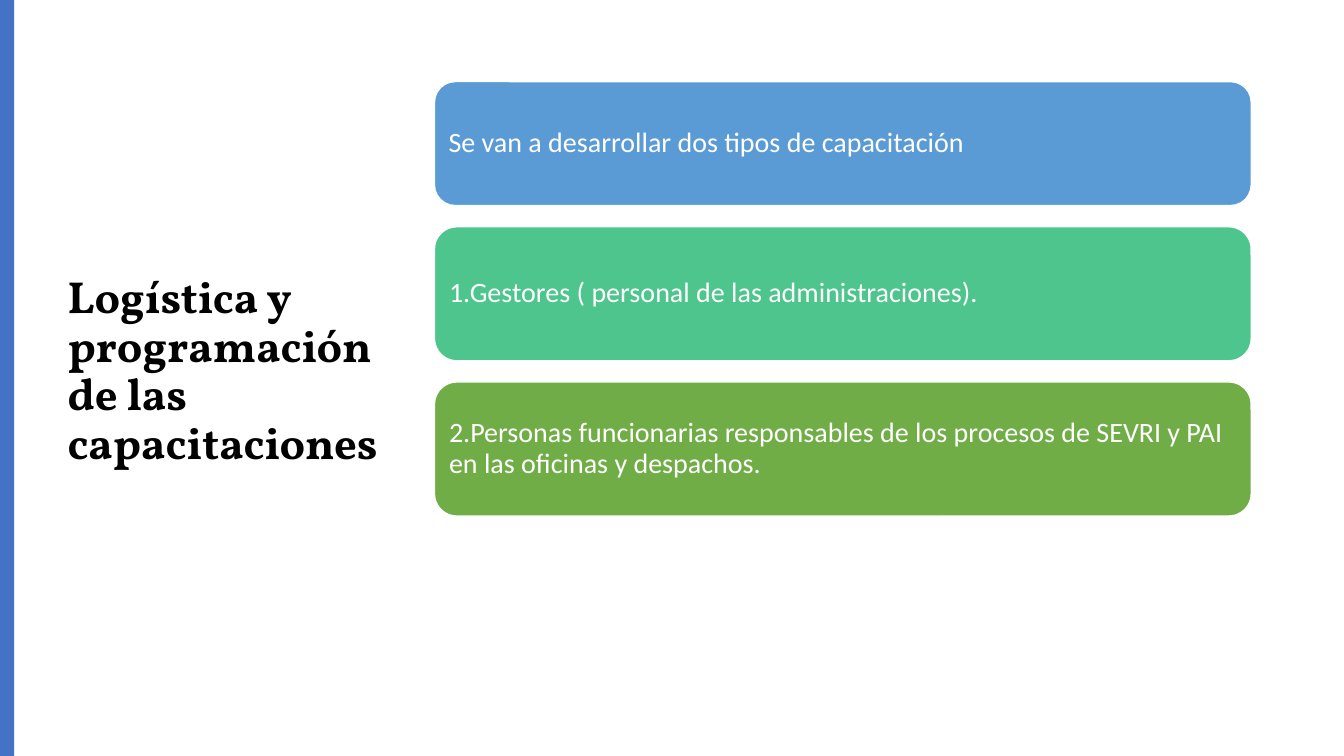
from dataclasses import dataclass

from pptx import Presentation
from pptx import util as u
from pptx.dml.color import RGBColor
from pptx.enum import shapes, text

SLIDE_WIDTH = u.Inches(13.33)
SLIDE_HEIGHT = u.Inches(7.5)
CARD_LEFT, CARD_WIDTH = 32.33, 60.77
FIRST_CARD_TOP, CARD_GAP = 10.8, 2.8


@dataclass
class Box:
    left: float
    top: float
    width: float
    height: float


@dataclass
class Card:
    wording: str
    fill: str
    height: float


CARDS = [
    Card("Se van a desarrollar dos tipos de capacitación", "5B9BD5", 16.4),
    Card("1.Gestores ( personal de las administraciones).", "4DC58D", 17.73),
    Card(
        "2.Personas funcionarias responsables de los procesos de SEVRI y PAI "
        "en las oficinas y despachos.",
        "70AD47",
        17.73,
    ),
]

TITLE_FONT = {"name": "Vollkorn", "size": u.Pt(32), "bold": True}
CARD_FONT = {"name": "Calibri", "size": u.Pt(20), "bold": False}
TITLE_FRAME = {
    "word_wrap": True,
    "auto_size": text.MSO_AUTO_SIZE.NONE,
    "vertical_anchor": text.MSO_ANCHOR.MIDDLE,
}
CARD_FRAME = TITLE_FRAME | {
    f"margin_{side}": u.Inches(0.08) for side in ("left", "top", "right", "bottom")
}
PARAGRAPH = {"alignment": text.PP_ALIGN.LEFT, "line_spacing": 0.9}


def color(value: str) -> RGBColor:
    return RGBColor.from_string(value)


def apply(target: object, values: dict) -> None:
    for name, value in values.items():
        setattr(target, name, value)


def place(box: Box) -> dict:
    return {
        "left": round(SLIDE_WIDTH * box.left / 100),
        "top": round(SLIDE_HEIGHT * box.top / 100),
        "width": round(SLIDE_WIDTH * box.width / 100),
        "height": round(SLIDE_HEIGHT * box.height / 100),
    }


def write(shape, wording: str, frame: dict, font: dict, font_color: str) -> None:
    apply(shape.text_frame, frame)
    paragraph = shape.text_frame.paragraphs[0]
    apply(paragraph, PARAGRAPH)
    run = paragraph.add_run()
    run.text = wording
    apply(run.font, font)
    run.font.color.rgb = color(font_color)


def add_filled_shape(slide, kind: shapes.MSO_SHAPE, box: Box, fill: str):
    shape = slide.shapes.add_shape(kind, **place(box))
    shape.shadow.inherit = False
    shape.fill.solid()
    shape.fill.fore_color.rgb = color(fill)
    shape.line.fill.background()
    return shape


def add_card(slide, card: Card, top: float) -> None:
    box = Box(CARD_LEFT, top, CARD_WIDTH, card.height)
    shape = add_filled_shape(slide, shapes.MSO_SHAPE.ROUNDED_RECTANGLE, box, card.fill)
    shape.line.color.rgb = color("FFFFFF")
    shape.line.width = u.Pt(1)
    write(shape, card.wording, CARD_FRAME, CARD_FONT, "FFFFFF")


def main() -> None:
    presentation = Presentation()
    apply(presentation, {"slide_width": SLIDE_WIDTH, "slide_height": SLIDE_HEIGHT})
    slide = presentation.slides.add_slide(presentation.slide_layouts[5])

    title = slide.shapes.title
    apply(title, place(Box(4.28, 9.07, 26.33, 80.27)))
    write(
        title,
        "Logística y programación de las capacitaciones",
        TITLE_FRAME,
        TITLE_FONT,
        "000000",
    )
    add_filled_shape(slide, shapes.MSO_SHAPE.RECTANGLE, Box(0, 0, 1.05, 100), "4472C4")

    top = FIRST_CARD_TOP
    for card in CARDS:
        add_card(slide, card, top)
        top += card.height + CARD_GAP

    presentation.save("out.pptx")


if __name__ == "__main__":
    main()
